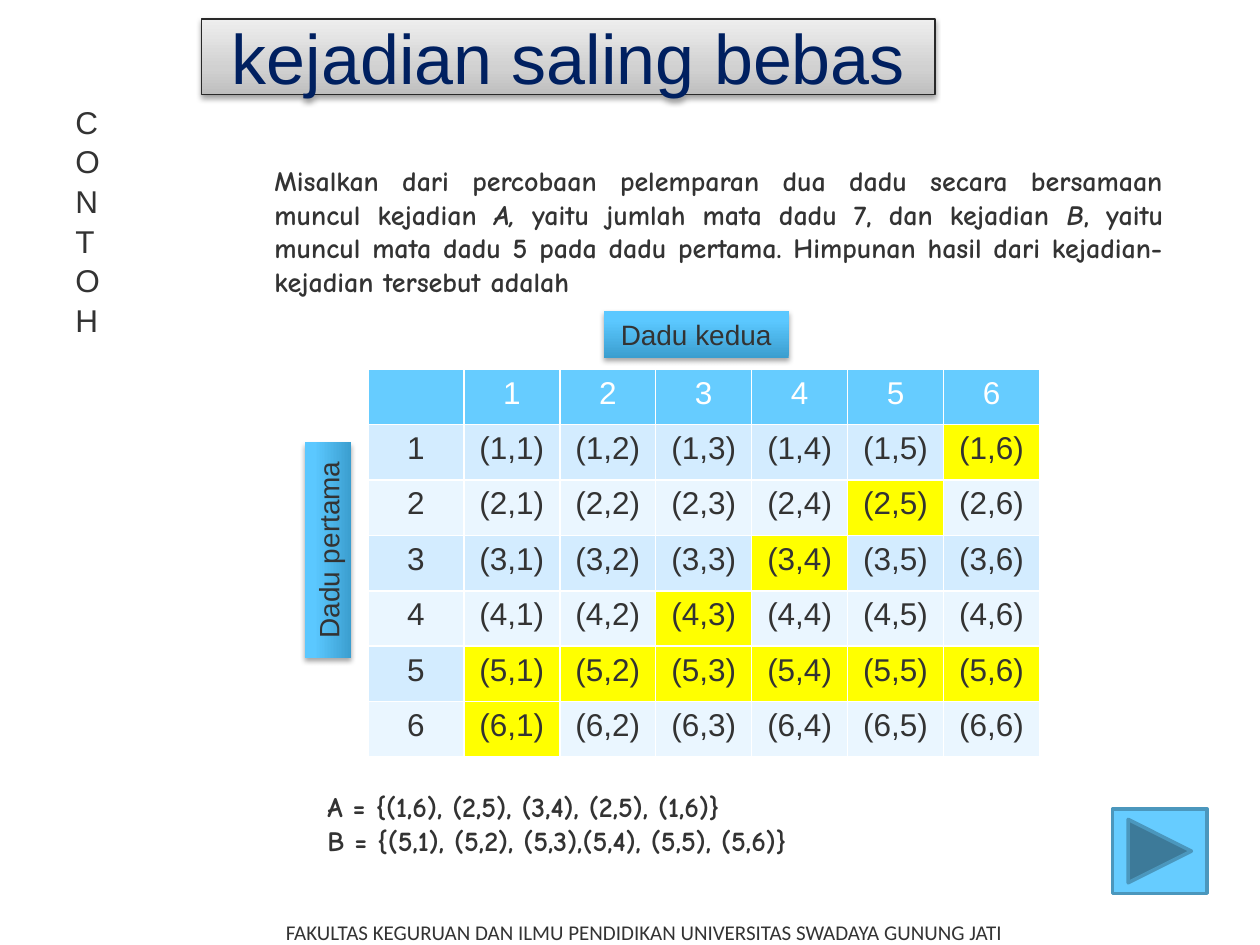
from lxml.etree import SubElement
from pptx import Presentation
from pptx.dml.color import RGBColor
from pptx.enum.shapes import MSO_SHAPE
from pptx.enum.text import MSO_ANCHOR, MSO_AUTO_SIZE, PP_ALIGN
from pptx.oxml import parse_xml
from pptx.oxml.ns import nsdecls, qn
from pptx.util import Inches, Pt

INK, WHITE, NAVY = "333333", "FFFFFF", "002060"
SKY, YELLOW, EDGE = "66CCFF", "FFFF00", "4B97BD"
BANDS = ["EAF6FF", "D3ECFF"]
SILVER = [(0, "BEBEBE"), (35, "D1D1D1"), (100, "EEEEEE")]
BLUES = [(0, "3B9ECF"), (80, "5BC8FF"), (100, "5DC9FF")]
BODY = {"name": "Arial", "size": Pt(18), "bold": False}
COMIC = {"name": "Comic Neue", "size": Pt(16), "bold": True}
LABEL = {"name": "Arial", "size": Pt(16)}
FOOTER = {"name": "Calibri", "size": Pt(12)}
FACES = range(1, 7)


def rgb(value):
    return RGBColor.from_string(value)


def box(*lengths):
    return [Inches(v) for v in lengths]


def add_run(p, text, style, color=INK, italic=None):
    r = p.add_run()
    r.text = text
    for name, value in {**style, "italic": italic}.items():
        setattr(r.font, name, value)
    r.font.color.rgb = rgb(color)
    return r


def add_gradient(shape, stops):
    """Fill the shape from bottom to top with (percent, colour) stops."""
    shape.fill.gradient()
    shape.fill.gradient_angle = 90
    stop_list = next(shape.element.spPr.iter(qn("a:gsLst")))
    for old in list(stop_list):
        stop_list.remove(old)
    for percent, color in stops:
        gs = SubElement(stop_list, qn("a:gs"), pos=str(percent * 1000))
        SubElement(gs, qn("a:srgbClr"), val=color)


def add_shadow(shape, opacity, distance):
    shape.shadow.inherit = False
    effects = shape.element.spPr.find(qn("a:effectLst"))
    shadow = SubElement(effects, qn("a:outerShdw"), blurRad=str(Pt(3.1)),
                        dist=str(Pt(distance)), dir="5400000", rotWithShape="0")
    black = SubElement(shadow, qn("a:srgbClr"), val="000000")
    SubElement(black, qn("a:alpha"), val=str(opacity * 1000))


def add_title(s, text):
    title = s.shapes.title
    title.left, title.top, title.width, title.height = box(1.6, 0.15, 5.82, 0.6)
    title.element.spPr.insert(1, parse_xml(
        f'<a:prstGeom {nsdecls("a")} prst="flowChartAlternateProcess"><a:avLst/></a:prstGeom>'))
    add_gradient(title, SILVER)
    title.line.color.rgb = rgb("292929")
    title.line.width = Pt(0.75)
    add_shadow(title, 38, 1.6)
    tf = title.text_frame
    tf.auto_size = MSO_AUTO_SIZE.NONE
    tf.vertical_anchor = MSO_ANCHOR.MIDDLE
    p = tf.paragraphs[0]
    p.alignment = PP_ALIGN.CENTER
    add_run(p, text, {"name": "Arial", "size": Pt(40)}, NAVY)


def add_text(s, position, paragraphs, style, wrap=False, align=PP_ALIGN.LEFT, spacing=None):
    """Add a text box; each paragraph is a list of (text, italic) runs."""
    tf = s.shapes.add_textbox(*box(*position)).text_frame
    tf.word_wrap = wrap
    for i, runs in enumerate(paragraphs):
        p = tf.add_paragraph() if i else tf.paragraphs[0]
        p.alignment = align
        p.line_spacing = spacing
        for text, italic in runs:
            add_run(p, text, style, italic=italic)


def add_lines(s, position, lines, style, spacing=None):
    add_text(s, position, [[(line, None)] for line in lines], style, spacing=spacing)


def add_label(s, position, text, rotation=0):
    sp = s.shapes.add_shape(MSO_SHAPE.RECTANGLE, *box(*position))
    sp.rotation = rotation
    add_gradient(sp, BLUES)
    sp.line.fill.background()
    add_shadow(sp, 35, 1.8)
    tf = sp.text_frame
    tf.word_wrap = False
    p = tf.paragraphs[0]
    p.alignment = PP_ALIGN.CENTER
    r = add_run(p, text, LABEL)
    r.font.fill.solid()
    r.font.color.rgb = rgb(INK)
    r.font._element.insert(0, parse_xml(
        f'<a:ln {nsdecls("a")} w="{Pt(1.45)}"><a:solidFill><a:srgbClr val="{WHITE}"/>'
        '</a:solidFill></a:ln>'))


def fill_cell(cell, text, fill, color=INK):
    cell.fill.solid()
    cell.fill.fore_color.rgb = rgb(fill)
    p = cell.text_frame.paragraphs[0]
    p.alignment = PP_ALIGN.CENTER
    if text:
        add_run(p, text, BODY, color)


def add_dice_table(s):
    """Mark the outcomes whose sum is 7 or whose first die shows 5."""
    table = s.shapes.add_table(7, 7, *box(2.92, 2.93, 5.33, 3.08)).table
    fill_cell(table.cell(0, 0), "", SKY)
    for first in FACES:
        band = BANDS[first % 2]
        fill_cell(table.cell(0, first), str(first), SKY, WHITE)
        fill_cell(table.cell(first, 0), str(first), band)
        for second in FACES:
            marked = first + second == 7 or first == 5
            fill_cell(table.cell(first, second), f"({first},{second})",
                      YELLOW if marked else band)


def add_next_button(s):
    sp = s.shapes.add_shape(MSO_SHAPE.ACTION_BUTTON_FORWARD_OR_NEXT,
                            *box(8.83, 6.42, 0.75, 0.67))
    sp.shadow.inherit = False
    sp.fill.solid()
    sp.fill.fore_color.rgb = rgb(SKY)
    sp.line.color.rgb = rgb(EDGE)
    sp.line.width = Pt(2)


def main():
    prs = Presentation()
    prs.slide_width, prs.slide_height = box(10, 7.5)
    s = prs.slides.add_slide(prs.slide_layouts[5])
    add_title(s, "kejadian saling bebas")
    problem = [
        ("Misalkan dari percobaan pelemparan dua dadu secara bersamaan muncul kejadian ", False),
        ("A, ", True),
        ("yaitu jumlah mata dadu 7, dan kejadian ", False),
        ("B", True),
        (", yaitu muncul mata dadu 5 pada dadu pertama. Himpunan hasil dari "
         "kejadian-kejadian tersebut adalah", False),
    ]
    add_text(s, (2.08, 1.25, 7.25, 2.26), [problem], COMIC, wrap=True, align=PP_ALIGN.JUSTIFY)
    add_dice_table(s)
    add_label(s, (4.79, 2.47, 1.47, 0.37), "Dadu kedua")
    add_label(s, (1.75, 4.18, 1.71, 0.37), "Dadu pertama", 270)
    add_lines(s, (0.5, 0.75, 0.41, 2.22), "CONTOH", BODY, spacing=1.05)
    add_lines(s, (2.5, 6.22, 4.94, 0.64),
              ["A = {(1,6), (2,5), (3,4), (2,5), (1,6)}",
               "B = {(5,1), (5,2), (5,3),(5,4), (5,5), (5,6)}"], COMIC)
    add_lines(s, (2.17, 7.25, 5.97, 0.3),
              ["FAKULTAS KEGURUAN DAN ILMU PENDIDIKAN UNIVERSITAS SWADAYA GUNUNG JATI"], FOOTER)
    add_next_button(s)
    prs.save("out.pptx")


if __name__ == "__main__":
    main()
